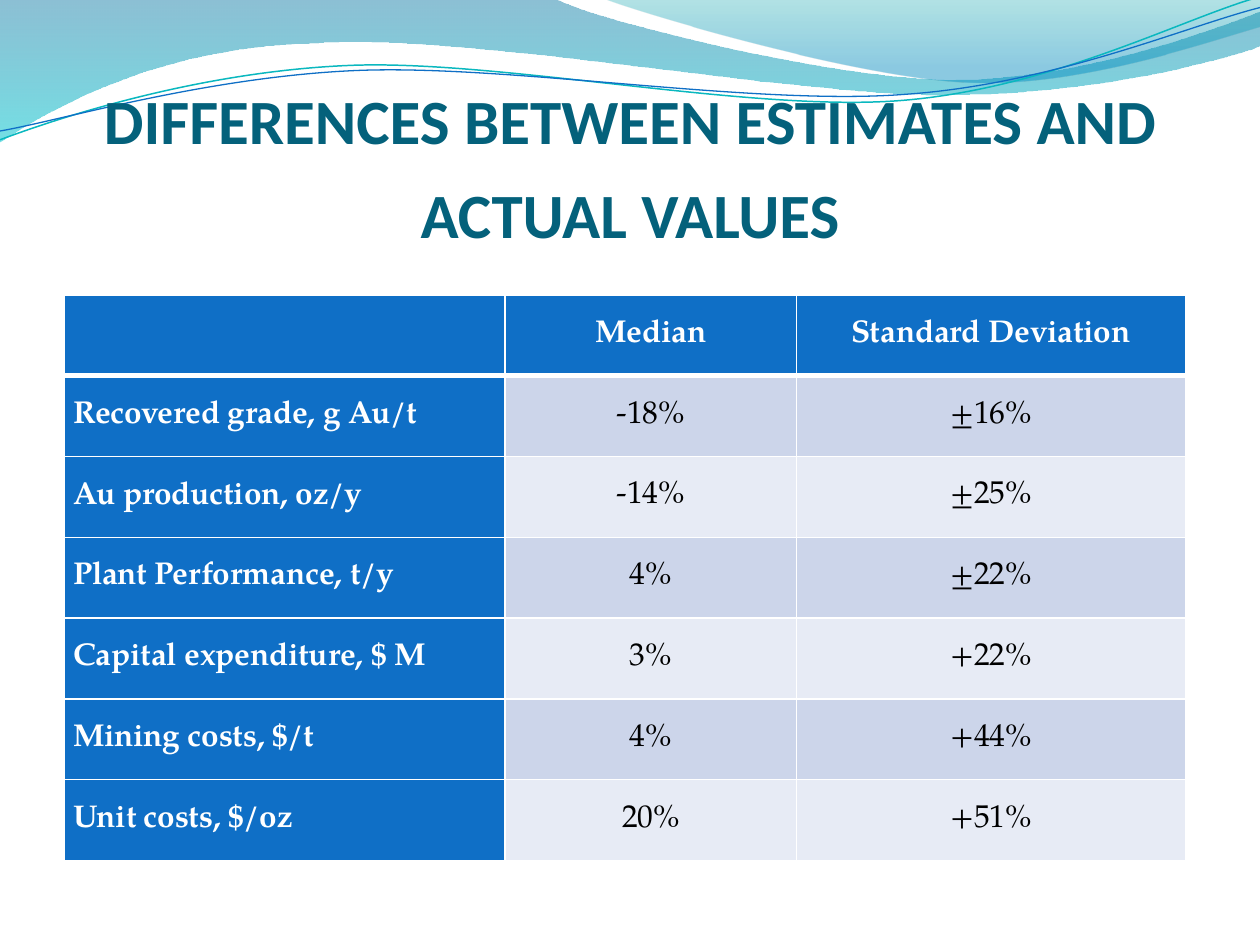
from lxml import etree
from pptx import Presentation
from pptx.dml.color import RGBColor
from pptx.enum.text import MSO_ANCHOR, PP_ALIGN
from pptx.oxml.ns import qn
from pptx.util import Cm, Pt

LEFT, CENTER = PP_ALIGN.LEFT, PP_ALIGN.CENTER
MIDDLE, BOTTOM = MSO_ANCHOR.MIDDLE, MSO_ANCHOR.BOTTOM
CM_PER_INCH = 2.54
TITLE_LAYOUT = 5

COLORS = {
    "title": "04617B", "header": "0F6FC6", "odd": "CCD5EA", "even": "E7EBF5",
    "white": "FFFFFF", "black": "000000",
    "deep": "0074A1", "aqua": "00C6CF", "teal": "00A1A9", "sky": "008BBF",
    "teal line": "0AB8BF", "blue line": "0F6FC6",
}
TITLE = "differences between estimates and actual values"
TITLE_FONT, TABLE_FONT = "Calibri", "TeX Gyre Pagella"
ROWS = [
    ("", "Median", "Standard Deviation"),
    ("Recovered grade, g Au/t", "‑18%", "±16%"),
    ("Au production, oz/y", "‑14%", "±25%"),
    ("Plant Performance, t/y", "4%", "±22%"),
    ("Capital expenditure, $ M", "3%", "+22%"),
    ("Mining costs, $/t", "4%", "+44%"),
    ("Unit costs, $/oz", "20%", "+51%"),
]
TABLE_LEFT, TABLE_TOP, TABLE_HEIGHT = 0.51, 2.34, 4.49
COLUMN_WIDTHS = [3.5, 2.31, 3.09]
HEADER_SPACING = (6, 6)
COLUMN_SPACING = [(3, 3), (6, 0), (3, 3)]

WAVES = [
    ([(0, 0), (4.4, -0.01), (4.76, 0.17, 6.64, 0.63, 7.58, 0.63),
      (8.53, 0.63, 9.58, 0.26, 10, 0.09), (10.01, 0.36),
      (9.83, 0.44, 8.7, 0.76, 7.46, 0.75), (6.22, 0.75, 3.82, 0.28, 2.57, 0.34),
      (1.29, 0.36, 0.46, 0.83, -0.01, 1.13), (0, 0)],
     [(0, "deep", 45), (1, "aqua", 55)]),
    ([(4.79, -0.01), (5.09, 0.11, 6.82, 0.62, 7.69, 0.65),
      (8.56, 0.69, 9.61, 0.32, 10, 0.21), (10, 0), (4.79, -0.01)],
     [(0, "teal", 30), (0.8, "sky", 45)]),
]
STRANDS = [
    ([(0, 1.11), (0.48, 0.93, 1.58, 0.57, 2.77, 0.52),
      (3.95, 0.47, 5.93, 0.89, 7.13, 0.8), (8.33, 0.71, 9.38, 0.15, 9.98, -0.02)],
     "teal line", 0.85),
    ([(0, 1.04), (0.47, 0.96, 1.64, 0.61, 2.83, 0.56),
      (4.03, 0.51, 5.97, 0.84, 7.17, 0.75), (8.36, 0.67, 9.41, 0.21, 10, 0.06)],
     "blue line", 0.75),
]


def length(inches):
    return Cm(inches * CM_PER_INCH)


def rgb(name):
    return RGBColor.from_string(COLORS[name])


def add_outline(page, steps, close):
    ends = [tuple(map(length, step[-2:])) for step in steps]
    builder = page.shapes.build_freeform(*ends[0])
    builder.add_line_segments(ends[1:], close=close)
    shape = builder.convert_to_shape()
    shape.shadow.inherit = False
    segments = list(shape.element.iter(qn("a:lnTo")))
    for segment, step in zip(segments, steps[1:]):
        if len(step) == 2:
            continue
        curve = etree.Element(qn("a:cubicBezTo"))
        for x, y in zip(step[::2], step[1::2]):
            etree.SubElement(curve, qn("a:pt"), x=str(length(x) - shape.left),
                             y=str(length(y) - shape.top))
        segment.getparent().replace(segment, curve)
    return shape


def add_wave(page, steps, stops):
    wave = add_outline(page, steps, True)
    wave.line.fill.background()
    wave.fill.gradient()
    wave.fill.gradient_angle = 270
    for stop, (position, color, _) in zip(wave.fill.gradient_stops, stops):
        stop.position = position
        stop.color.rgb = rgb(color)
    for tag, (_, _, opacity) in zip(wave.element.spPr.iter(qn("a:srgbClr")), stops):
        etree.SubElement(tag, qn("a:alpha"), val=str(opacity * 1000))


def add_strand(page, steps, color, width):
    strand = add_outline(page, steps, False)
    strand.fill.background()
    strand.line.color.rgb = rgb(color)
    strand.line.width = Pt(width)


def write(para, text, font, size, color, bold):
    span = para.add_run()
    span.text = text
    span.font.name = font
    span.font.size = Pt(size)
    span.font.bold = bold
    span.font.color.rgb = rgb(color)
    return span.font._element


def set_title(page):
    title = page.shapes.title
    title.element.getparent().append(title.element)
    title.left, title.top, title.width, title.height = map(length, (0.5, 0.77, 9, 1.25))
    frame = title.text_frame
    frame.word_wrap = True
    frame.vertical_anchor = BOTTOM
    frame.margin_left = frame.margin_right = frame.margin_bottom = 0
    frame.margin_top = length(0.05)
    para = frame.paragraphs[0]
    para.alignment = CENTER
    write(para, TITLE, TITLE_FONT, 45, "title", True).set("cap", "small")


def add_borders(cell, top, bottom):
    properties = cell._tc.get_or_add_tcPr()
    for side, width in (("L", 1), ("R", 1), ("T", top), ("B", bottom)):
        line = etree.SubElement(properties, qn(f"a:ln{side}"), w=str(Pt(width)))
        fill = etree.SubElement(line, qn("a:solidFill"))
        etree.SubElement(fill, qn("a:srgbClr"), val=COLORS["white"])


def format_cell(cell, row, column, text):
    heading = row == 0 or column == 0
    add_borders(cell, 3 if row == 1 else 1, 3 if row == 0 else 1)
    cell.fill.solid()
    cell.fill.fore_color.rgb = rgb("header" if heading else "odd" if row % 2 else "even")
    cell.vertical_anchor = MIDDLE
    cell.margin_left = cell.margin_right = length(0.07)
    cell.margin_top = cell.margin_bottom = 0
    if not text:
        return
    para = cell.text_frame.paragraphs[0]
    para.alignment = CENTER if row == 0 or column else LEFT
    before, after = HEADER_SPACING if row == 0 else COLUMN_SPACING[column]
    para.space_before, para.space_after = Pt(before), Pt(after)
    color = "white" if heading else "black"
    write(para, text, TABLE_FONT, 18, color, heading).set("spc", "-10")


def add_values(page):
    box = (TABLE_LEFT, TABLE_TOP, sum(COLUMN_WIDTHS), TABLE_HEIGHT)
    table = page.shapes.add_table(len(ROWS), len(COLUMN_WIDTHS), *map(length, box)).table
    for column, width in zip(table.columns, COLUMN_WIDTHS):
        column.width = length(width)
    for row, texts in enumerate(ROWS):
        table.rows[row].height = length(TABLE_HEIGHT / len(ROWS))
        for column, text in enumerate(texts):
            format_cell(table.cell(row, column), row, column, text)


def main():
    deck = Presentation()
    deck.slide_width, deck.slide_height = length(10), length(7.5)
    page = deck.slides.add_slide(deck.slide_layouts[TITLE_LAYOUT])
    for wave in WAVES:
        add_wave(page, *wave)
    for strand in STRANDS:
        add_strand(page, *strand)
    set_title(page)
    add_values(page)
    deck.save("out.pptx")


if __name__ == "__main__":
    main()
